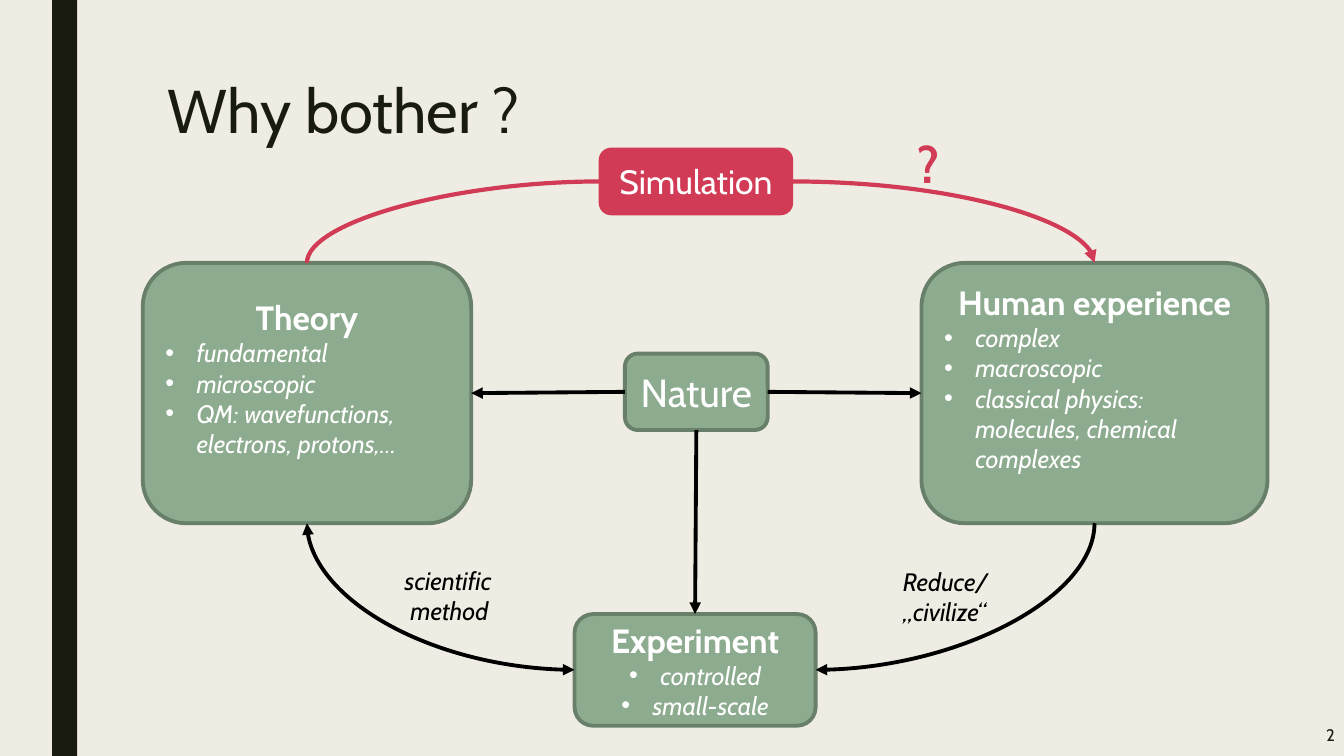
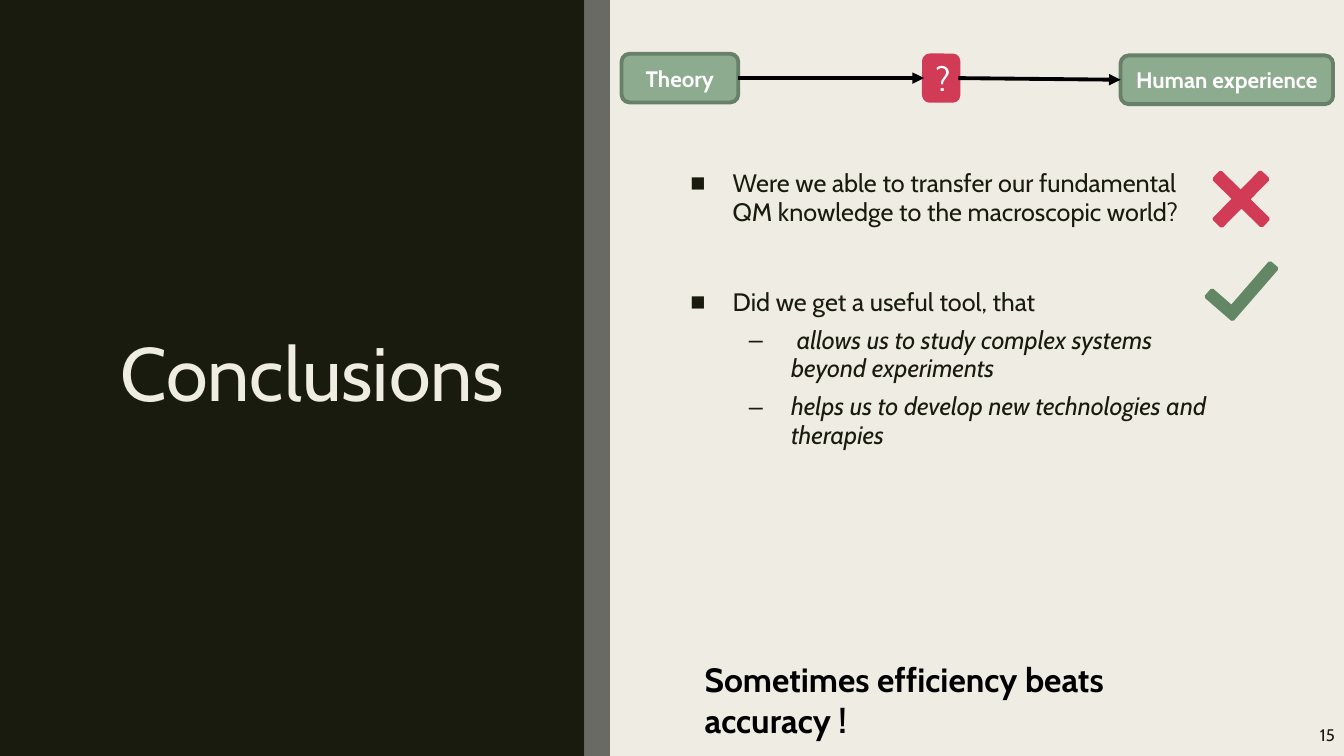
from dataclasses import dataclass

from lxml import etree
from pptx import Presentation
from pptx import util as u
from pptx.dml.color import RGBColor
from pptx.enum import shapes as es, text as et
from pptx.oxml.ns import qn

COLS, ROWS = 160, 90
CELL = u.Inches(1) / 12
TOP, LEFT, BOTTOM, RIGHT = range(4)
KIND = es.MSO_SHAPE
LINK = es.MSO_CONNECTOR
ALIGN = et.PP_ALIGN
ANCHOR = et.MSO_ANCHOR


@dataclass(frozen=True)
class Theme:
    font: str = "Cabin"
    paper: str = "EFEDE3"
    dark: str = "191B0E"
    grey: str = "696A64"
    sage: str = "8DAB8E"
    edge: str = "687F69"
    leaf: str = "638764"
    red: str = "D13B56"
    white: str = "FFFFFF"
    black: str = "000000"
    line: float = 2.75
    curve: float = 3
    tiny: int = 12
    small: int = 16
    text: int = 18
    head: int = 24
    large: int = 28
    mark: int = 36
    title: int = 44
    cover: int = 54


T = Theme()


@dataclass(frozen=True)
class Style:
    """How one paragraph looks; margin and hang are inches, gaps are points."""
    size: int = T.text
    color: str = T.white
    bold: bool = False
    italic: bool = False
    align: ALIGN = ALIGN.LEFT
    bullet: str = ""
    margin: float = 0
    hang: float = 0
    spacing: float = 1
    before: float = 0
    after: float = 0
    level: int = 0


HEAD = Style(T.head, bold=True, align=ALIGN.CENTER)
PLAIN = Style(T.head, align=ALIGN.CENTER)
SMALL = Style(T.small, bold=True, align=ALIGN.CENTER)
POINT = Style(italic=True, bullet="•", margin=0.31, hang=0.31)
MIDDLE = Style(italic=True, bullet="•", margin=0.31, hang=0.31, align=ALIGN.CENTER)
LABEL = Style(color=T.black, italic=True)
ASK = Style(color=T.dark, bullet="■", margin=0.42, hang=0.42, spacing=0.94, after=2)
NEXT = Style(color=T.dark, bullet="■", margin=0.42, hang=0.42, spacing=0.94,
             before=42, after=2)
SUB = Style(color=T.dark, italic=True, bullet="–", margin=1, hang=0.42,
            spacing=0.94, before=5, after=2, level=1)


def rgb(code):
    return RGBColor.from_string(code)


def area(*cells):
    """Turn grid cells into lengths."""
    return [u.Emu(round(n * CELL)) for n in cells]


def write(frame, lines):
    """Fill a frame with (text, style) paragraphs."""
    for i, (words, style) in enumerate(lines):
        para = frame.add_paragraph() if i else frame.paragraphs[0]
        para.text = words
        para.alignment = style.align
        para.level = style.level
        if style.bullet:
            props = para._p.get_or_add_pPr()
            props.set("marL", str(u.Inches(style.margin)))
            props.set("indent", str(-u.Inches(style.hang)))
            etree.SubElement(props, qn("a:buFont")).set("typeface", "Arial")
            etree.SubElement(props, qn("a:buChar")).set("char", style.bullet)
        para.line_spacing = style.spacing
        para.space_before = u.Pt(style.before)
        para.space_after = u.Pt(style.after)
        font = para.font
        font.name, font.size = T.font, u.Pt(style.size)
        font.bold, font.italic = style.bold, style.italic
        font.color.rgb = rgb(style.color)


def label(slide, cells, lines, anchor=ANCHOR.TOP, wrap=True):
    frame = slide.shapes.add_textbox(*area(*cells)).text_frame
    frame.word_wrap = wrap
    frame.vertical_anchor = anchor
    write(frame, lines)


def paint(shape, fill, edge=None):
    shape.shadow.inherit = False
    shape.fill.solid()
    shape.fill.fore_color.rgb = rgb(fill)
    if edge:
        shape.line.color.rgb = rgb(edge)
        shape.line.width = u.Pt(T.line)
    else:
        shape.line.fill.background()


def block(slide, kind, cells, fill, edge=None):
    shape = slide.shapes.add_shape(kind, *area(*cells))
    paint(shape, fill, edge)
    return shape


def box(slide, cells, lines, fill=T.sage, edge=T.edge, lift=0):
    """Rounded box; lift is extra room in inches below its text."""
    shape = block(slide, KIND.ROUNDED_RECTANGLE, cells, fill, edge)
    frame = shape.text_frame
    frame.word_wrap = True
    frame.vertical_anchor = ANCHOR.MIDDLE
    frame.margin_bottom = u.Inches(0.05 + lift)
    write(frame, lines)
    return shape


def cross(slide, cells):
    shape = block(slide, KIND.CROSS, cells, T.red, T.red)
    shape.adjustments[0] = 0.43
    shape.rotation = 44.5


def tick(slide, cells):
    """Check mark: an L outline, turned."""
    left, top, wide, high = cells
    arm = high / 4
    right, low = left + wide, top + high
    corners = [(left, top), (left + arm, top), (left + arm, low - arm),
               (right, low - arm), (right, low), (left, low)]
    points = [area(*corner) for corner in corners]
    pen = slide.shapes.build_freeform(*points[0])
    pen.add_line_segments(points[1:])
    shape = pen.convert_to_shape()
    paint(shape, T.leaf, T.leaf)
    shape.rotation = 311


def join(slide, start, end, color=T.black, width=T.line, tips=("tailEnd",), curve=False):
    """Link two (shape, side) pairs; a curve starts at a left or right side."""
    link = slide.shapes.add_connector(LINK.CURVE if curve else LINK.STRAIGHT, 0, 0, 0, 0)
    link.begin_connect(*start)
    link.end_connect(*end)
    link.line.color.rgb = rgb(color)
    link.line.width = u.Pt(width)
    props = link._element.spPr
    if curve:
        props.find(qn("a:prstGeom")).set("prst", "curvedConnector2")
    for tip in tips:
        etree.SubElement(props.find(qn("a:ln")), qn("a:" + tip)).set("type", "triangle")
    etree.SubElement(props, qn("a:effectLst"))


def bar(slide, left, color):
    block(slide, KIND.RECTANGLE, (left, 0, 3, ROWS), color)


def page(deck, number):
    """Blank slide with paper colour and page number."""
    slide = deck.slides.add_slide(deck.slide_layouts[6])
    fill = slide.background.fill
    fill.solid()
    fill.fore_color.rgb = rgb(T.paper)
    label(slide, (139.1, 84.8, 21, 5.3),
          [(number, Style(T.tiny, T.dark, align=ALIGN.RIGHT))], ANCHOR.MIDDLE)
    return slide


def title(slide, cells, words, size, color, align=ALIGN.LEFT, anchor=ANCHOR.TOP):
    style = Style(size, color, align=align, spacing=0.89)
    label(slide, cells, [(words, style)], anchor)


def bother(deck):
    slide = page(deck, "2")
    bar(slide, 6.2, T.dark)
    title(slide, (18.8, 9, 126, 9.6), "Why bother ?", T.title, T.dark)

    nature = box(slide, (74.4, 42.1, 17, 9.1),
                 [("Nature", Style(T.large, align=ALIGN.CENTER))])
    theory = box(slide, (17, 31.3, 39.1, 31), [
        ("Theory", HEAD),
        ("fundamental", POINT),
        ("microscopic", POINT),
        ("QM: wavefunctions,\nelectrons, protons,…", POINT),
    ], lift=0.3)
    human = box(slide, (109.7, 31.3, 41.2, 31), [
        ("Human experience", HEAD),
        ("complex", POINT),
        ("macroscopic", POINT),
        ("classical physics:\nmolecules, chemical complexes", POINT),
    ], lift=0.3)
    trial = box(slide, (68.4, 73.1, 28.7, 13.3), [
        ("Experiment", HEAD),
        ("controlled", MIDDLE),
        ("small-scale", MIDDLE),
    ])
    model = box(slide, (71.5, 17.8, 22.7, 7.6), [("Simulation", PLAIN)], T.red, T.red)

    for start, end in ((LEFT, (theory, RIGHT)), (RIGHT, (human, LEFT)),
                       (BOTTOM, (trial, TOP))):
        join(slide, (nature, start), end)
    join(slide, (trial, LEFT), (theory, BOTTOM), tips=("headEnd", "tailEnd"), curve=True)
    join(slide, (trial, RIGHT), (human, BOTTOM), tips=("headEnd",), curve=True)
    join(slide, (model, LEFT), (theory, TOP), T.red, T.curve, (), True)
    join(slide, (model, RIGHT), (human, TOP), T.red, T.curve, curve=True)

    label(slide, (47, 66.7, 13.8, 8.5),
          [("scientific", LABEL), (" method", LABEL)], wrap=False)
    label(slide, (106.3, 66.8, 13.6, 8.5),
          [("Reduce/", LABEL), ("„civilize“", LABEL)], wrap=False)
    label(slide, (108, 15.2, 5.8, 8.5), [("?", Style(T.mark, T.red, bold=True))])


def close(deck):
    slide = page(deck, "15")
    split = 69.6
    block(slide, KIND.RECTANGLE, (0, 0, split, ROWS), T.dark)
    bar(slide, split, T.grey)
    title(slide, (8.4, 10.4, 52.8, 69.1), "Conclusions", T.cover, T.paper,
          ALIGN.RIGHT, ANCHOR.MIDDLE)

    theory = box(slide, (74, 6.4, 13.9, 5.8), [("Theory", SMALL)])
    doubt = box(slide, (110, 6.6, 4.1, 5.4), [("?", PLAIN)], T.red, T.red)
    human = box(slide, (133.4, 6.6, 25.3, 5.8), [("Human experience", SMALL)])
    for start, end in ((theory, doubt), (doubt, human)):
        join(slide, (start, RIGHT), (end, LEFT))

    label(slide, (81, 18.1, 64.2, 37.6), [
        ("Were we able to transfer our fundamental QM knowledge"
         " to the macroscopic world?", ASK),
        ("Did we get a useful tool, that", NEXT),
        (" allows us to study complex systems beyond experiments", SUB),
        ("helps us to develop new technologies and therapies", SUB),
    ], ANCHOR.MIDDLE)
    cross(slide, (143.8, 19.8, 7.9, 7.8))
    tick(slide, (143.8, 31.6, 8, 4.1))
    label(slide, (82.7, 77.9, 67.7, 6),
          [("Sometimes efficiency beats accuracy !", Style(T.head, T.black, bold=True))],
          wrap=False)


def main():
    deck = Presentation()
    deck.slide_width, deck.slide_height = area(COLS, ROWS)
    bother(deck)
    close(deck)
    deck.save("out.pptx")


if __name__ == "__main__":
    main()
